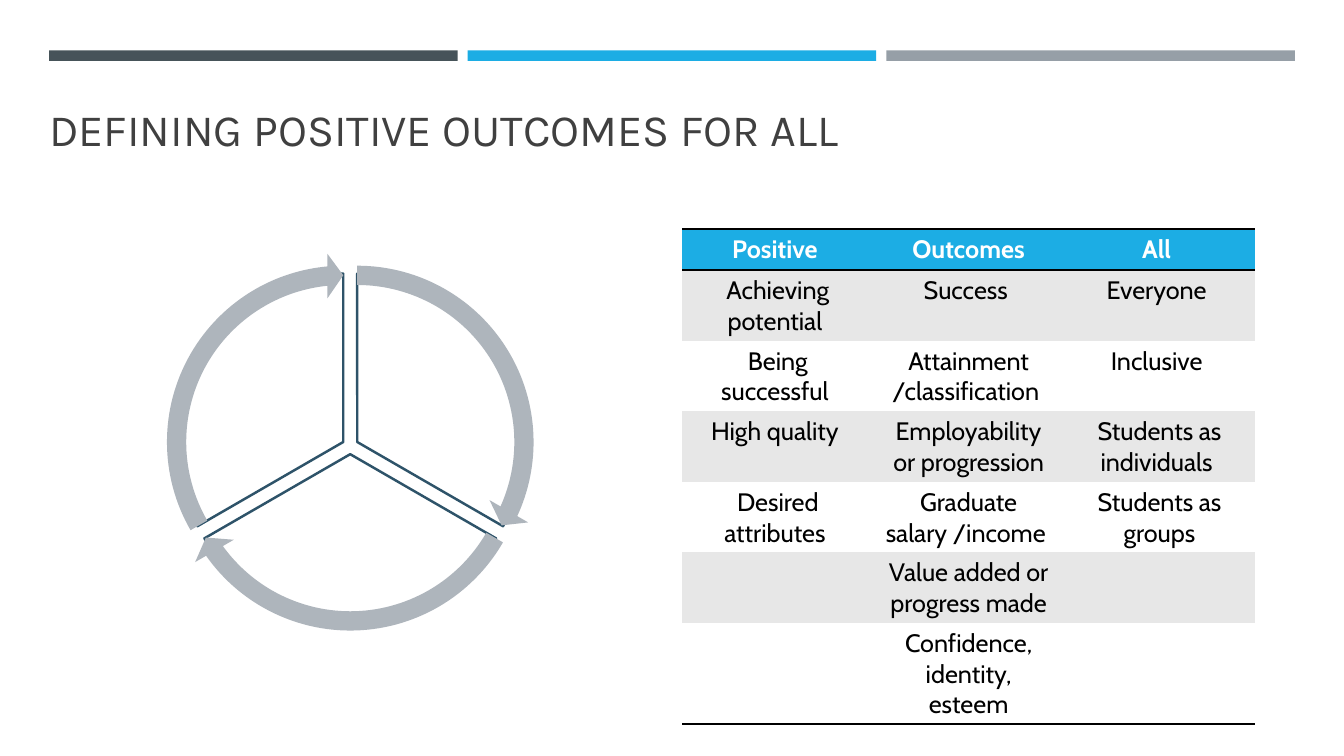
from lxml import etree
from pptx import Presentation
from pptx.dml.color import RGBColor
from pptx.enum.shapes import MSO_SHAPE
from pptx.enum.text import MSO_ANCHOR, PP_ALIGN
from pptx.oxml import parse_xml
from pptx.oxml.ns import nsdecls, qn
from pptx.util import Pt

RECT, PIE, ARROW = MSO_SHAPE.RECTANGLE, MSO_SHAPE.PIE, MSO_SHAPE.CIRCULAR_ARROW
BOTTOM, CENTER = MSO_ANCHOR.BOTTOM, PP_ALIGN.CENTER
PLAIN = "{2D5ABB26-0587-4C30-8999-92F81FD0307C}"
COLORS = {
    "slate": "465359", "blue": "1CADE4", "gray": "969FA7",
    "title": "404040", "edge": "2E5369", "arrow": "AEB5BC",
    "white": "FFFFFF", "band": "E7E7E7", "black": "000000",
}
ROWS = [
    ("Positive ", "Outcomes", "All "),
    ("Achieving potential ", "Success ", "Everyone "),
    ("Being successful ", "Attainment /classification ", "Inclusive "),
    ("High quality ", "Employability or progression", "Students as individuals "),
    ("Desired attributes ", "Graduate salary /income ", "Students as groups"),
    ("", "Value added or progress made", ""),
    ("", "Confidence, identity, esteem", ""),
]


def color(name):
    """Return the named color."""
    return RGBColor.from_string(COLORS[name])


def style(para, face, size, tint, bold=False):
    """Format the runs of a paragraph."""
    for run in para.runs:
        font = run.font
        font.name, font.size, font.bold = face, Pt(size), bold
        font.color.rgb = color(tint)


def add_form(slide, kind, box, fill, edge=None, turns=()):
    """Add a filled preset shape with its adjustments."""
    form = slide.shapes.add_shape(kind, *map(Pt, box))
    form.shadow.inherit = False
    form.fill.solid()
    form.fill.fore_color.rgb = color(fill)
    if edge:
        form.line.color.rgb = color(edge)
        form.line.width = Pt(1.75)
    else:
        form.line.fill.background()
    for i, turn in enumerate(turns):
        form.adjustments[i] = turn


def add_bars(slide, left, top, width, height):
    """Draw three equal bars across the box."""
    gap = 7.2
    size = (width - 2 * gap) / 3
    for i, tint in enumerate(("slate", "blue", "gray")):
        add_form(slide, RECT, (left + i * (size + gap), top, size, height), tint)


def add_title(slide, left, top, width, height):
    """Write the title at the foot of the box."""
    frame = slide.shapes.add_textbox(*map(Pt, (left, top, width, height))).text_frame
    frame.word_wrap = True
    frame.vertical_anchor = BOTTOM
    frame.text = "DEFINING POSITIVE OUTCOMES FOR ALL"
    style(frame.paragraphs[0], "Karla", 32, "title")


def add_cycle(slide, left, top, width, height):
    """Draw three pie slices and the arrows that circle them."""
    mid_x, mid_y = left + width / 2, top + height / 2
    parts = [(5, -2.9, 162, 18), (0, 5.8, 18, 90), (-5, -2.9, 90, 162)]

    def square(dx, dy, size):
        """Return a square box shifted from the middle."""
        return mid_x + dx - size / 2, mid_y + dy - size / 2, size, size

    for dx, dy, start, end in parts:
        add_form(slide, PIE, square(dx, dy, 240.5), "white", "edge", (start, end))
    head = 3.275
    for dx, dy, start, end in parts:
        turns = (0.051, head, end - head, start, 0.059)
        add_form(slide, ARROW, square(dx, dy, 270), "arrow", turns=turns)


def add_rule(cell, side):
    """Draw a black border on one side of a cell."""
    rule = parse_xml(f'<a:{side} {nsdecls("a")} w="25400"/>')
    fill = etree.SubElement(rule, qn("a:solidFill"))
    etree.SubElement(fill, qn("a:srgbClr"), val=COLORS["black"])
    cell._tc.get_or_add_tcPr().insert(0, rule)


def add_grid(slide, left, top, width, height):
    """Fill the table of outcomes."""
    box = map(Pt, (left, top, width, height))
    table = slide.shapes.add_table(len(ROWS), len(ROWS[0]), *box).table
    table._tbl.tblPr.find(qn("a:tableStyleId")).text = PLAIN
    for r, texts in enumerate(ROWS):
        fill = "blue" if r == 0 else "band" if r % 2 else "white"
        for c, text in enumerate(texts):
            cell = table.cell(r, c)
            cell.fill.solid()
            cell.fill.fore_color.rgb = color(fill)
            cell.text_frame.text = text
            para = cell.text_frame.paragraphs[0]
            para.alignment = CENTER
            style(para, "Cabin", 18, "black" if r else "white", r == 0)
            if r in (0, len(ROWS) - 1):
                add_rule(cell, "lnB")
            if r == 0:
                add_rule(cell, "lnT")


def main():
    """Build and save the slide."""
    deck = Presentation()
    deck.slide_width, deck.slide_height = Pt(960), Pt(540)
    slide = deck.slides.add_slide(deck.slide_layouts[6])
    add_bars(slide, 35.1, 36, 889.8, 7.6)
    add_title(slide, 28.1, 36.7, 868.3, 77.8)
    add_cycle(slide, 110.2, 179.3, 280, 278.7)
    add_grid(slide, 487.4, 163.4, 409, 206.6)
    deck.save("out.pptx")


if __name__ == "__main__":
    main()
